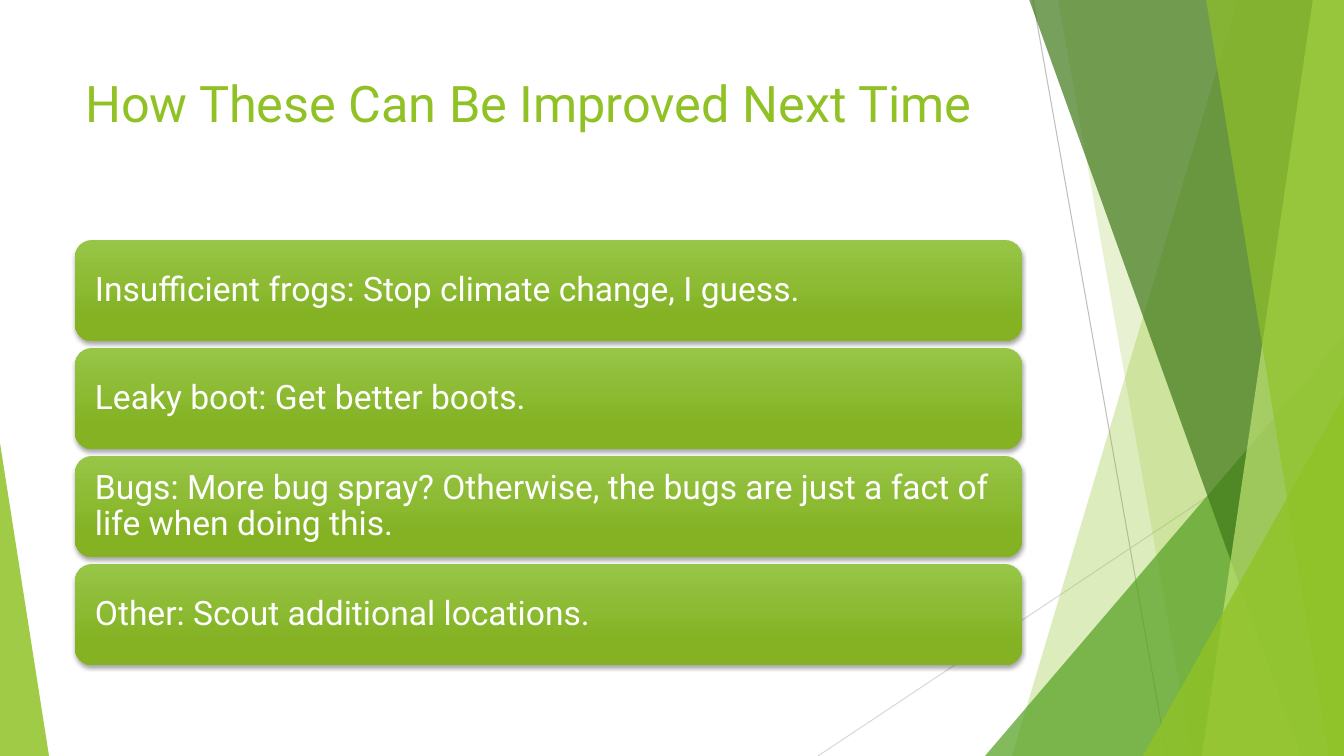
import lxml.etree
import pptx
import pptx.dml.color
import pptx.enum.shapes
import pptx.enum.text
import pptx.oxml.ns
import pptx.util

TITLE = "How These Can Be Improved Next Time"
IMPROVEMENTS = [
    "Insufficient frogs: Stop climate change, I guess.",
    "Leaky boot: Get better boots.",
    "Bugs: More bug spray? Otherwise, the bugs are just a fact of life when doing this.",
    "Other: Scout additional locations.",
]

FONT = "Roboto"
COLORS = {
    "white": "FFFFFF", "black": "000000", "lime": "90C226", "green": "54A021",
    "forest": "3F7819", "pale": "C0E474", "steep line": "BFBFBF",
    "shallow line": "D9D9D9", "bar top": "97C547", "bar bottom": "84B223",
}

# Lengths in px
WIDTH, HEIGHT = 1344, 756
EMU_PER_PX = 914400 / 100.8
TITLE_BOX = (75, 67, 947, 146)
BAR_LEFT, BAR_TOP, BAR_WIDTH, BAR_HEIGHT, BAR_PITCH = 75, 240, 947, 101, 108
BAR_INSET = 15

# Start x, start y, end x, end y, color
LINES = [
    (1033, 0, 1167, 756, "steep line"),
    (1344, 406, 818, 756, "shallow line"),
]
# Bands reach the right edge: (top x, bottom x, color, opacity %)
# Triangles: (left, top, width, height, apex, color, opacity %)
FACETS = [
    (1238, 1012, "lime", 30),
    (1058, 1192, "lime", 20),
    (985, 336, 359, 420, 1, "green", 72),
    (1029, 1301, "forest", 70),
    (1313, 1202, "pale", 70),
    (1206, 1329, "lime", 65),
    (1143, 396, 201, 360, 1, "lime", 80),
    (0, 443, 49, 313, 0, "lime", 85),
]


def px(length):
    return pptx.util.Emu(round(length * EMU_PER_PX))


def rgb(name):
    return pptx.dml.color.RGBColor.from_string(COLORS[name])


def add_element(parent, tag, **attributes):
    element = lxml.etree.SubElement(parent, pptx.oxml.ns.qn(tag))
    for key, value in attributes.items():
        element.set(key, str(value))
    return element


def add_color_alpha(color_element, percent):
    add_element(color_element, "a:alpha", val=percent * 1000)


def add_line(slide, x1, y1, x2, y2, color):
    line = slide.shapes.add_connector(
        pptx.enum.shapes.MSO_CONNECTOR.STRAIGHT, px(x1), px(y1), px(x2), px(y2))
    line.line.color.rgb = rgb(color)
    line.line.width = pptx.util.Pt(0.75)
    add_element(line.element.spPr, "a:effectLst")


def add_facet(slide, *geometry, color, opacity):
    """Add a translucent band (two numbers) or triangle (five numbers)."""
    if len(geometry) == 2:
        top_x, bottom_x = geometry
        builder = slide.shapes.build_freeform(top_x, -1, scale=EMU_PER_PX)
        builder.add_line_segments(
            [(WIDTH, -1), (WIDTH, HEIGHT), (bottom_x, HEIGHT)], close=True)
        facet = builder.convert_to_shape()
    else:
        *box, apex = geometry
        facet = slide.shapes.add_shape(
            pptx.enum.shapes.MSO_SHAPE.ISOSCELES_TRIANGLE, *map(px, box))
        facet.adjustments[0] = apex
    facet.shadow.inherit = False
    facet.line.fill.background()
    facet.fill.solid()
    facet.fill.fore_color.rgb = rgb(color)
    fill_color = facet.element.spPr.find(
        pptx.oxml.ns.qn("a:solidFill") + "/" + pptx.oxml.ns.qn("a:srgbClr"))
    add_color_alpha(fill_color, opacity)


def write_text(shape, text, size, color):
    frame = shape.text_frame
    frame.word_wrap = True
    paragraph = frame.paragraphs[0]
    paragraph.alignment = pptx.enum.text.PP_ALIGN.LEFT
    run = paragraph.add_run()
    run.text = text
    run.font.name = FONT
    run.font.size = pptx.util.Pt(size)
    run.font.color.rgb = rgb(color)
    return frame


def add_title(slide):
    title = slide.shapes.title
    title.left, title.top, title.width, title.height = map(px, TITLE_BOX)
    frame = write_text(title, TITLE, 36, "lime")
    frame.vertical_anchor = pptx.enum.text.MSO_ANCHOR.TOP
    # Bring the title in front of the background facets
    title.element.getparent().append(title.element)


def add_bar(slide, index, text):
    bar = slide.shapes.add_shape(
        pptx.enum.shapes.MSO_SHAPE.ROUNDED_RECTANGLE, px(BAR_LEFT),
        px(BAR_TOP + index * BAR_PITCH), px(BAR_WIDTH), px(BAR_HEIGHT))
    bar.line.fill.background()
    bar.fill.gradient()
    bar.fill.gradient_angle = 270
    stops = [(0, "bar top"), (0.78, "bar bottom")]
    for stop, (position, color) in zip(bar.fill.gradient_stops, stops):
        stop.position = position
        stop.color.rgb = rgb(color)

    bar.shadow.inherit = False
    effects = bar.element.spPr.find(pptx.oxml.ns.qn("a:effectLst"))
    shadow = add_element(
        effects, "a:outerShdw", blurRad=pptx.util.Pt(3), dist=pptx.util.Pt(2),
        dir=90 * 60000, rotWithShape=0)
    add_color_alpha(add_element(shadow, "a:srgbClr", val=COLORS["black"]), 35)

    frame = write_text(bar, text, 24, "white")
    frame.vertical_anchor = pptx.enum.text.MSO_ANCHOR.MIDDLE
    frame.margin_left = frame.margin_right = px(BAR_INSET)
    frame.margin_top = frame.margin_bottom = px(BAR_INSET)
    frame.paragraphs[0].line_spacing = 0.9


def main():
    presentation = pptx.Presentation()
    presentation.slide_width = px(WIDTH)
    presentation.slide_height = px(HEIGHT)
    slide = presentation.slides.add_slide(presentation.slide_layouts[5])
    slide.background.fill.solid()
    slide.background.fill.fore_color.rgb = rgb("white")

    for line in LINES:
        add_line(slide, *line)
    for *geometry, color, opacity in FACETS:
        add_facet(slide, *geometry, color=color, opacity=opacity)
    add_title(slide)
    for index, text in enumerate(IMPROVEMENTS):
        add_bar(slide, index, text)
    presentation.save("out.pptx")


if __name__ == "__main__":
    main()
